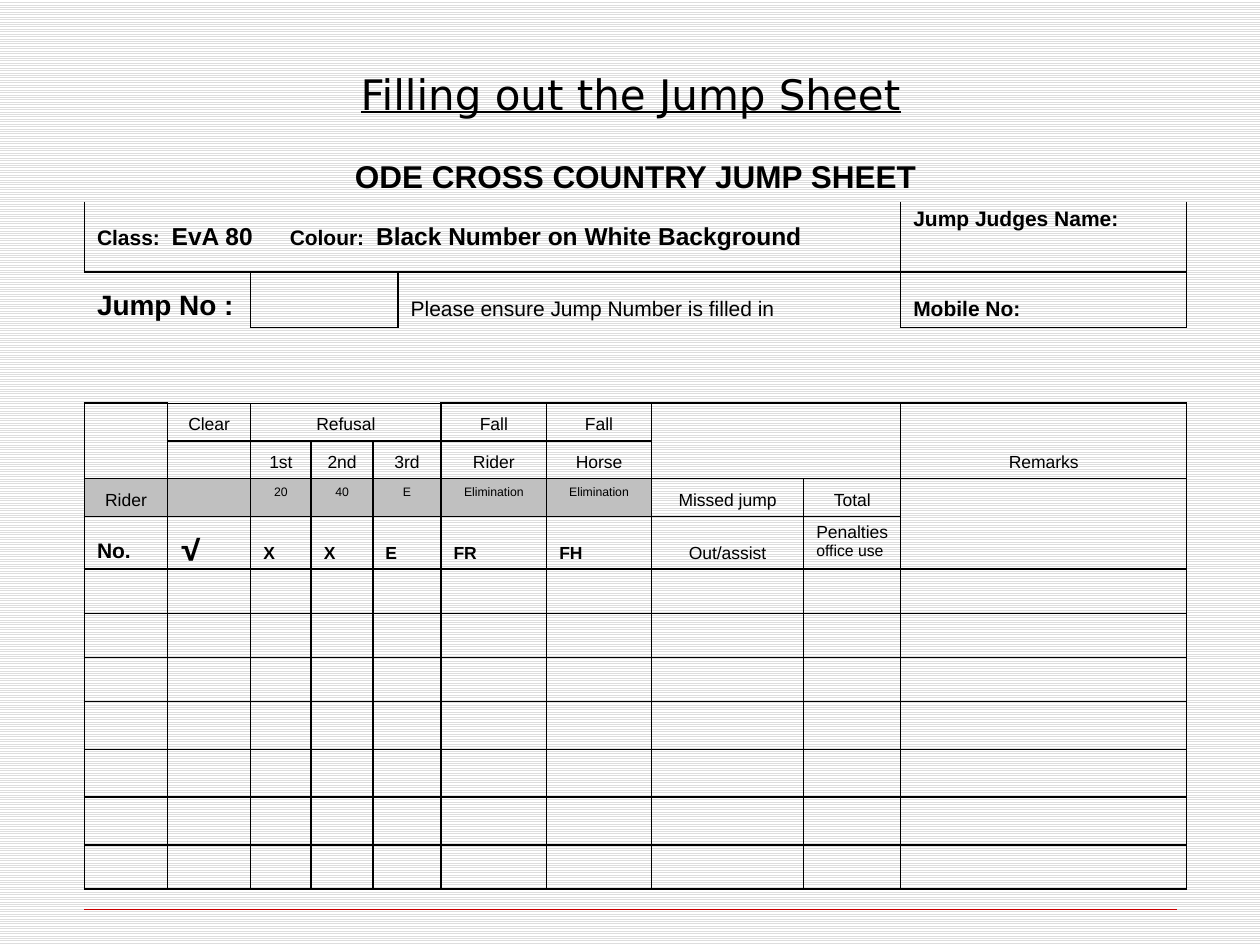
from dataclasses import dataclass
from typing import Optional

from lxml import etree
from pptx import Presentation
from pptx.dml.color import RGBColor
from pptx.enum.dml import MSO_PATTERN
from pptx.enum.shapes import MSO_CONNECTOR
from pptx.enum.text import MSO_ANCHOR, PP_ALIGN
from pptx.oxml.ns import qn
from pptx.util import Inches, Pt

LEFT, CENTER = PP_ALIGN.LEFT, PP_ALIGN.CENTER
TOP, BOTTOM = MSO_ANCHOR.TOP, MSO_ANCHOR.BOTTOM
STRAIGHT = MSO_CONNECTOR.STRAIGHT
LIGHT_HORIZONTAL = MSO_PATTERN.LIGHT_HORIZONTAL

BLACK = RGBColor(0x00, 0x00, 0x00)
WHITE = RGBColor(0xFF, 0xFF, 0xFF)
STRIPE_GRAY = RGBColor(0xDD, 0xDD, 0xDD)
PENALTY_GRAY = RGBColor(0xC0, 0xC0, 0xC0)
RULE_RED = RGBColor(0xCC, 0x00, 0x00)

NO_GRID_STYLE = "{2D5ABB26-0587-4C30-8999-92F81FD0307C}"
COLUMN_WIDTHS = [0.66, 0.66, 0.48, 0.49, 0.2, 0.34, 0.84, 0.83, 1.21, 0.77, 2.27]
ROW_HEIGHTS = [0.45, 0.56, 0.44, 0.6, 0.3, 0.3, 0.3, 0.41,
               0.35, 0.35, 0.35, 0.38, 0.38, 0.38, 0.35]
PENALTY_ROW = 6
FIRST_ENTRY_ROW = 8


@dataclass(frozen=True)
class Words:
    text: str
    size: float = 10
    bold: bool = False
    font: str = "Arial"
    underline: Optional[bool] = None


@dataclass(frozen=True)
class Entry:
    row: int
    column: int
    words: tuple[Words, ...]
    align: PP_ALIGN = CENTER
    anchor: MSO_ANCHOR = BOTTOM


@dataclass(frozen=True)
class Span:
    row: int
    column: int
    last_row: int
    last_column: int


SPANS = [
    Span(0, 0, 0, 10), Span(1, 0, 1, 9),
    Span(2, 0, 2, 1), Span(2, 2, 2, 4), Span(2, 5, 2, 9),
    Span(3, 3, 3, 4), Span(4, 2, 4, 5),
    Span(4, 8, 5, 9), Span(4, 10, 5, 10), Span(6, 10, 7, 10),
] + [Span(row, 4, row, 5) for row in range(5, len(ROW_HEIGHTS))]

ENTRIES = [
    Entry(0, 0, (Words("ODE CROSS COUNTRY JUMP SHEET", 18, True),)),
    Entry(1, 0, (
        Words("Class:", 12, True), Words(" ", 24, True),
        Words("EvA 80  ", 14, True), Words("  ", 24, True),
        Words("Colour:  ", 12, True),
        Words("Black Number on White Background", 14, True),
    ), LEFT, TOP),
    Entry(1, 10, (Words("Jump Judges Name:", 12, True),), LEFT, TOP),
    Entry(2, 0, (Words("Jump No :", 16, True),), LEFT),
    Entry(2, 5, (Words("Please ensure Jump Number is filled in", 12),), LEFT),
    Entry(2, 10, (Words("Mobile No:", 12, True),), LEFT),
    Entry(7, 0, (Words("No.", 12, True),), LEFT),
    Entry(7, 1, (Words("√", 14, True, "Montserrat"),), LEFT),
    Entry(7, 9, (Words("Penalties "), Words("office use", 9)), LEFT, TOP),
]
HEADINGS = [
    (4, 1, "Clear"), (4, 2, "Refusal"), (4, 6, "Fall"), (4, 7, "Fall"),
    (4, 10, "Remarks"), (5, 2, "1st"), (5, 3, "2nd"), (5, 4, "3rd"),
    (5, 6, "Rider"), (5, 7, "Horse"), (6, 0, "Rider"),
    (6, 8, "Missed jump"), (6, 9, "Total"), (7, 8, "Out/assist"),
]
PENALTIES = {2: "20", 3: "40", 4: "E", 6: "Elimination", 7: "Elimination"}
MARKS = {2: "X", 3: "X", 4: "E", 6: "FR", 7: "FH"}
ENTRIES += [Entry(row, column, (Words(text),)) for row, column, text in HEADINGS]
ENTRIES += [Entry(PENALTY_ROW, column, (Words(text, 7),), CENTER, TOP)
            for column, text in PENALTIES.items()]
ENTRIES += [Entry(7, column, (Words(text, 10, True),), LEFT)
            for column, text in MARKS.items()]

FULL_GRID = "LRTB"
ROW_BORDERS = {0: "", 1: "LRB", 3: "B", 8: "LRTb", 9: "LRtB"}
CELL_BORDERS = {
    (2, 0): "RT", (2, 5): "LRT",
    (3, 1): "b", (3, 2): "Tb", (3, 3): "Tb", (3, 5): "b", (3, 10): "TB",
    (4, 0): "LRT", (4, 1): "LRtB", (4, 2): "LRtB", (5, 0): "LRB",
}


def write_words(paragraph, words: tuple[Words, ...], align: PP_ALIGN) -> None:
    paragraph.alignment = align
    for part in words:
        run = paragraph.add_run()
        run.text = part.text
        run.font.size = Pt(part.size)
        run.font.bold = part.bold
        run.font.name = part.font
        run.font.underline = part.underline
        run.font.color.rgb = BLACK


def draw_borders(cell, sides: str) -> None:
    properties = cell._tc.get_or_add_tcPr()
    for side in FULL_GRID:
        thin = side.lower() in sides
        width = Pt(0.25 if thin else 1)
        line = etree.SubElement(properties, qn(f"a:ln{side}"), w=str(int(width)))
        if thin or side in sides:
            fill = etree.SubElement(line, qn("a:solidFill"))
            etree.SubElement(fill, qn("a:srgbClr"), val=str(BLACK))
        else:
            etree.SubElement(line, qn("a:noFill"))


def format_cell(cell, row: int, column: int) -> None:
    if not cell.is_spanned:
        sides = ROW_BORDERS.get(row, FULL_GRID)
        draw_borders(cell, CELL_BORDERS.get((row, column), sides))
    if row == PENALTY_ROW and column < 8:
        cell.fill.solid()
        cell.fill.fore_color.rgb = PENALTY_GRAY
    else:
        cell.fill.background()


def draw_jump_sheet(slide) -> None:
    frame = slide.shapes.add_table(
        len(ROW_HEIGHTS), len(COLUMN_WIDTHS), Inches(0.67), Inches(1.15),
        Inches(sum(COLUMN_WIDTHS)), Inches(sum(ROW_HEIGHTS)))
    table = frame.table
    table.first_row = table.horz_banding = False
    table._tbl.tblPr.find(qn("a:tableStyleId")).text = NO_GRID_STYLE
    for column, width in zip(table.columns, COLUMN_WIDTHS):
        column.width = Inches(width)
    for row, height in zip(table.rows, ROW_HEIGHTS):
        row.height = Inches(height)
    for span in SPANS:
        table.cell(span.row, span.column).merge(
            table.cell(span.last_row, span.last_column))
    for row in range(len(ROW_HEIGHTS)):
        for column in range(len(COLUMN_WIDTHS)):
            format_cell(table.cell(row, column), row, column)
    for entry in ENTRIES:
        cell = table.cell(entry.row, entry.column)
        cell.vertical_anchor = entry.anchor
        write_words(cell.text_frame.paragraphs[0], entry.words, entry.align)
    for cell in table.iter_cells():
        if not cell.text_frame.text:
            paragraph = cell.text_frame.paragraphs[0]
            etree.SubElement(paragraph._p, qn("a:endParaRPr"), sz="1000")


def draw_title(slide) -> None:
    title = slide.shapes.add_textbox(
        Inches(0.63), Inches(0.44), Inches(8.75), Inches(0.55))
    title.text_frame.word_wrap = True
    title.text_frame.vertical_anchor = BOTTOM
    words = Words("Filling out the Jump Sheet", 24, False, "DejaVu Sans", True)
    write_words(title.text_frame.paragraphs[0], (words,), CENTER)


def draw_footer_rule(slide) -> None:
    rule = slide.shapes.add_connector(
        STRAIGHT, Inches(0.67), Inches(7.22), Inches(9.34), Inches(7.22))
    rule.line.color.rgb = RULE_RED
    rule.line.width = Pt(0.25)
    etree.SubElement(rule._element.spPr, qn("a:effectLst"))


def main() -> None:
    presentation = Presentation()
    presentation.slide_width = Inches(10)
    presentation.slide_height = Inches(7.5)
    slide = presentation.slides.add_slide(presentation.slide_layouts[6])
    background = slide.background.fill
    background.patterned()
    background.pattern = LIGHT_HORIZONTAL
    background.fore_color.rgb = STRIPE_GRAY
    background.back_color.rgb = WHITE
    draw_footer_rule(slide)
    draw_title(slide)
    draw_jump_sheet(slide)
    presentation.save("out.pptx")


if __name__ == "__main__":
    main()
